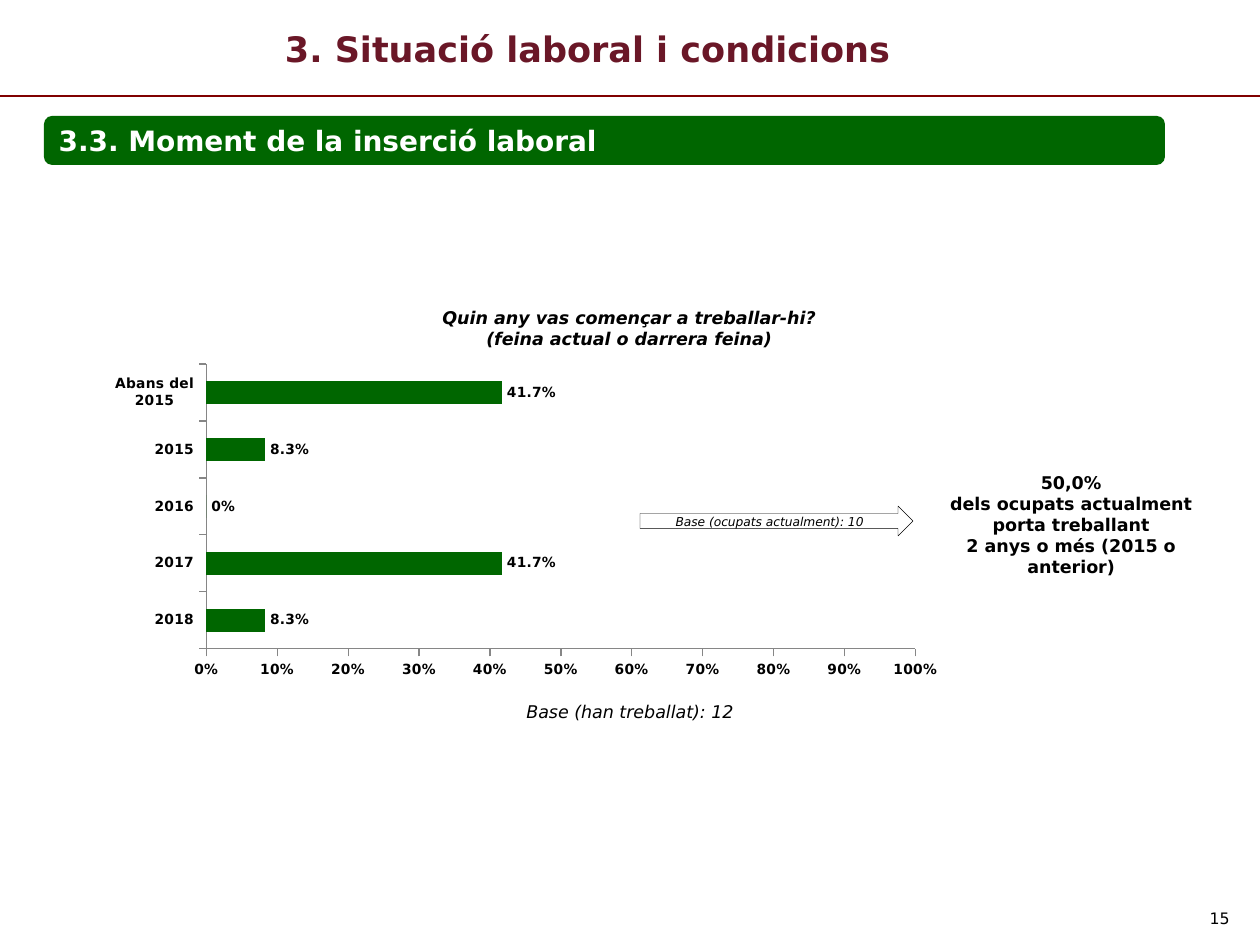
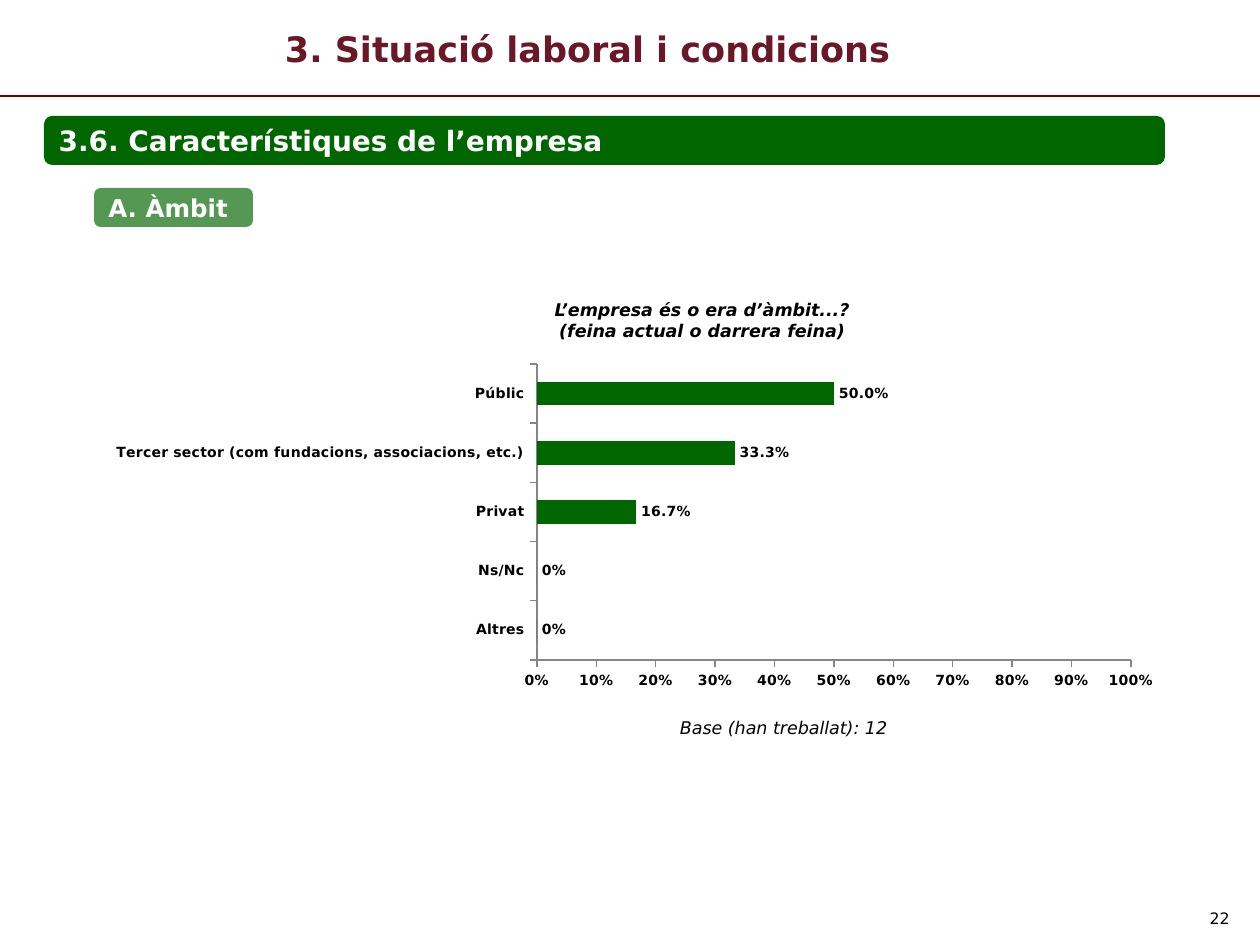
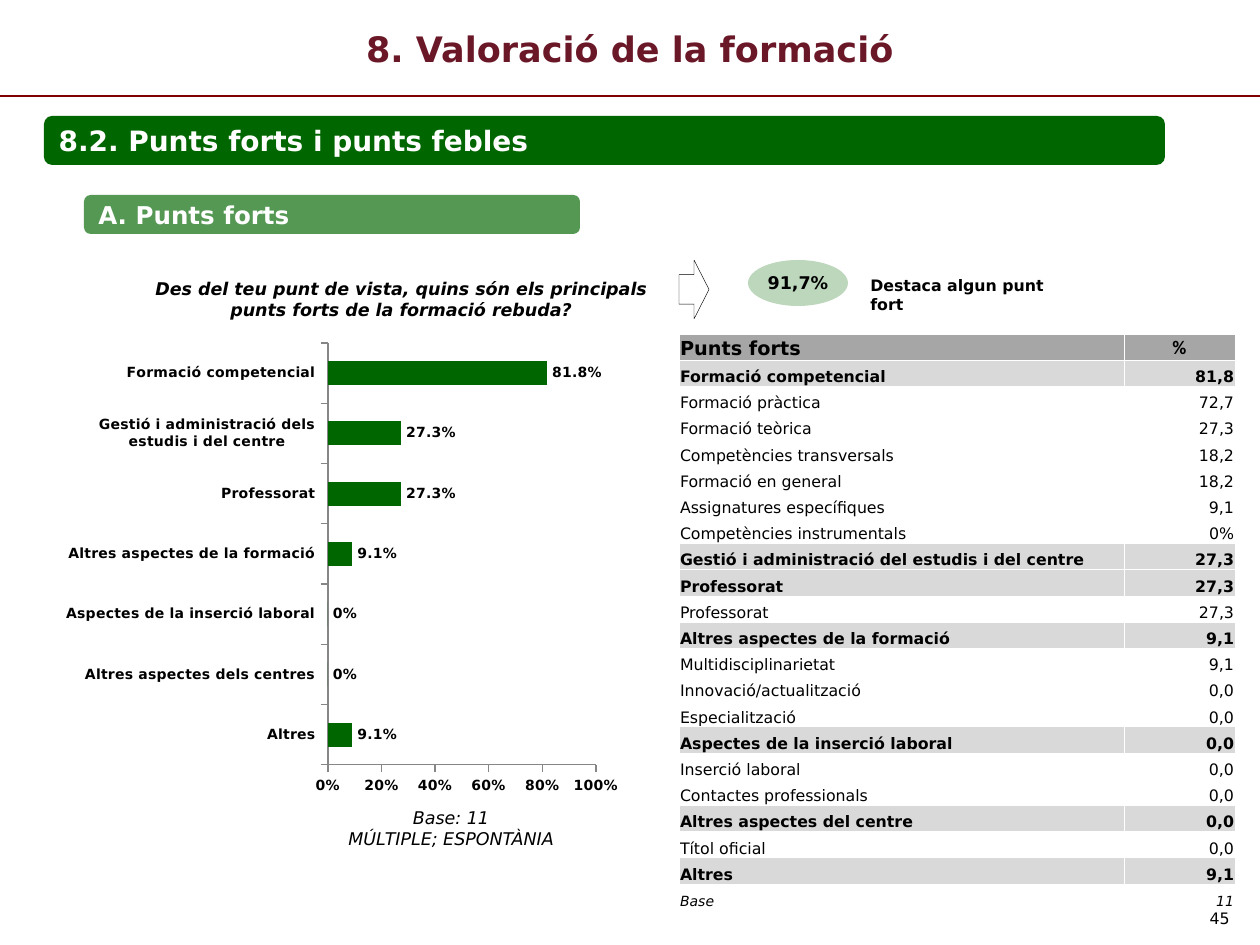
from collections import namedtuple

import pptx
import pptx.chart.data
import pptx.dml.color
import pptx.enum.chart
import pptx.enum.shapes
import pptx.enum.text
import pptx.oxml.ns
import pptx.util
from lxml import etree

RGBColor = pptx.dml.color.RGBColor
SHAPE = pptx.enum.shapes.MSO_SHAPE
ALIGN = pptx.enum.text.PP_ALIGN
ANCHOR = pptx.enum.text.MSO_ANCHOR

BLACK = RGBColor(0x00, 0x00, 0x00)
WHITE = RGBColor(0xFF, 0xFF, 0xFF)
GREEN = RGBColor(0x00, 0x66, 0x00)
MAROON = RGBColor(0x6A, 0x17, 0x27)
RULE_RED = RGBColor(0x80, 0x00, 0x00)
AXIS_GREY = RGBColor(0x86, 0x86, 0x86)
HEADER_GREY = RGBColor(0xA6, 0xA6, 0xA6)
GROUP_GREY = RGBColor(0xD9, 0xD9, 0xD9)

FONT = "DejaVu Sans"
PX_PER_INCH = 126
PAGE_WIDTH, PAGE_HEIGHT = 1260, 945
TITLE_HEIGHT = 96
TITLE_INDENT = 285
INSET = 13

Box = namedtuple("Box", "left top width height")

STRENGTHS = [
    ("Formació competencial", "81,8", [
        ("Formació pràctica", "72,7"),
        ("Formació teòrica", "27,3"),
        ("Competències transversals", "18,2"),
        ("Formació en general", "18,2"),
        ("Assignatures específiques", "9,1"),
        ("Competències instrumentals", "0%"),
    ]),
    ("Gestió i administració del estudis i del centre", "27,3", []),
    ("Professorat", "27,3", [("Professorat", "27,3")]),
    ("Altres aspectes de la formació", "9,1", [
        ("Multidisciplinarietat", "9,1"),
        ("Innovació/actualització", "0,0"),
        ("Especialització", "0,0"),
    ]),
    ("Aspectes de la inserció laboral", "0,0", [
        ("Inserció laboral", "0,0"),
        ("Contactes professionals", "0,0"),
    ]),
    ("Altres aspectes del centre", "0,0", [("Títol oficial", "0,0")]),
    ("Altres", "9,1", []),
]


def px(length):
    return pptx.util.Emu(round(length * 914400 / PX_PER_INCH))


def place(box):
    return [px(length) for length in box]


def style_font(font, size, color=BLACK, bold=False, italic=False, name=FONT):
    font.name, font.size, font.bold, font.italic = name, pptx.util.Pt(size), bold, italic
    font.color.rgb = color


def write(frame, lines, size, align=ALIGN.CENTER, anchor=ANCHOR.TOP, **style):
    frame.word_wrap = True
    frame.vertical_anchor = anchor
    for index, line in enumerate(lines):
        para = frame.add_paragraph() if index else frame.paragraphs[0]
        para.alignment = align
        span = para.add_run()
        span.text = line
        style_font(span.font, size, **style)


def add_text(page, box, lines, size, **style):
    frame = page.shapes.add_textbox(*place(box)).text_frame
    write(frame, lines, size, **style)
    return frame


def add_green_shape(page, kind, box, opacity=100):
    shape = page.shapes.add_shape(kind, *place(box))
    shape.shadow.inherit = False
    shape.fill.solid()
    shape.fill.fore_color.rgb = GREEN
    shape.line.fill.background()
    if opacity < 100:
        color = shape.fill._xPr.find(".//" + pptx.oxml.ns.qn("a:srgbClr"))
        etree.SubElement(color, pptx.oxml.ns.qn("a:alpha"), val=str(opacity * 1000))
    return shape


def add_heading(page, box, text, size, opacity=100):
    bar = add_green_shape(page, SHAPE.ROUNDED_RECTANGLE, box, opacity)
    write(bar.text_frame, [text], size, align=ALIGN.LEFT, anchor=ANCHOR.MIDDLE,
          color=WHITE, bold=True)


def add_arrow(page, box):
    arrow = page.shapes.add_shape(SHAPE.RIGHT_ARROW, *place(box))
    arrow.shadow.inherit = False
    arrow.fill.background()
    arrow.line.color.rgb = BLACK
    arrow.line.width = pptx.util.Pt(0.25)


def add_page(deck, title, section, number, centred=False):
    """Add a page with the title, rule, section bar and page number all pages share."""
    page = deck.slides.add_slide(deck.slide_layouts[6])
    rule = page.shapes.add_connector(pptx.enum.shapes.MSO_CONNECTOR.STRAIGHT,
                                     0, px(TITLE_HEIGHT), px(PAGE_WIDTH), px(TITLE_HEIGHT))
    rule.line.color.rgb = RULE_RED
    rule.line.width = pptx.util.Pt(1.5)
    etree.SubElement(rule._element.spPr, pptx.oxml.ns.qn("a:effectLst"))
    frame = add_text(page, Box(0, 0, PAGE_WIDTH, TITLE_HEIGHT), [title], 20,
                     align=ALIGN.CENTER if centred else ALIGN.LEFT,
                     anchor=ANCHOR.MIDDLE, color=MAROON, bold=True)
    if not centred:
        frame.margin_left = px(TITLE_INDENT)
    add_heading(page, Box(44, 116, 1121, 49), section, 16)
    add_text(page, Box(948, 903, 294, 26), [str(number)], 9, align=ALIGN.RIGHT)
    return page


def fix_plot_area(chart, box, plot):
    """Set the inner plot area, given in px from the corner of the chart box."""
    area = chart._chartSpace.chart.plotArea
    for old in area.findall(pptx.oxml.ns.qn("c:layout")):
        area.remove(old)
    layout = etree.Element(pptx.oxml.ns.qn("c:layout"))
    manual = etree.SubElement(layout, pptx.oxml.ns.qn("c:manualLayout"))
    settings = [
        ("layoutTarget", "inner"), ("xMode", "edge"), ("yMode", "edge"),
        ("x", plot.left / box.width), ("y", plot.top / box.height),
        ("w", plot.width / box.width), ("h", plot.height / box.height),
    ]
    for tag, value in settings:
        etree.SubElement(manual, pptx.oxml.ns.qn("c:" + tag), val=str(value))
    area.insert(0, layout)


def add_bar_chart(page, box, plot, shares, step):
    """Draw shares, listed from the bottom bar up, on a scale from 0 to 100%."""
    data = pptx.chart.data.CategoryChartData()
    data.categories = list(shares)
    data.add_series("Series 1", list(shares.values()))
    chart = page.shapes.add_chart(pptx.enum.chart.XL_CHART_TYPE.BAR_CLUSTERED,
                                  *place(box), data).chart
    chart.has_legend = False
    chart.has_title = False
    style_font(chart.font, 8, bold=True)

    scale = chart.value_axis
    scale.minimum_scale, scale.maximum_scale, scale.major_unit = 0, 1, step
    scale.has_major_gridlines = False
    scale.tick_labels.number_format = "0%"
    scale.tick_labels.number_format_is_linked = False
    for axis in (scale, chart.category_axis):
        axis.major_tick_mark = pptx.enum.chart.XL_TICK_MARK.OUTSIDE
        axis.format.line.color.rgb = AXIS_GREY
        style_font(axis.tick_labels.font, 8, bold=True)

    bars = chart.plots[0]
    bars.gap_width = 150
    bars.vary_by_categories = False
    bars.series[0].format.fill.solid()
    bars.series[0].format.fill.fore_color.rgb = GREEN
    bars.has_data_labels = True
    labels = bars.data_labels
    labels.show_value = True
    labels.number_format = "0.0%;-0.0%;0%"
    labels.number_format_is_linked = False
    labels.position = pptx.enum.chart.XL_LABEL_POSITION.OUTSIDE_END
    style_font(labels.font, 8, bold=True)
    fix_plot_area(chart, box, plot)


def add_question(page, box, lines):
    add_text(page, box, lines, 10, bold=True, italic=True)


def add_base(page, box, lines):
    add_text(page, box, lines, 10, italic=True)


def fill_cell(cell, text, fill, size, align, **style):
    cell.margin_left = cell.margin_right = cell.margin_top = px(1)
    cell.margin_bottom = 0
    properties = cell._tc.get_or_add_tcPr()
    for side in ("lnL", "lnR", "lnT", "lnB"):
        border = etree.SubElement(properties, pptx.oxml.ns.qn("a:" + side), w="6350")
        solid = etree.SubElement(border, pptx.oxml.ns.qn("a:solidFill"))
        etree.SubElement(solid, pptx.oxml.ns.qn("a:srgbClr"), val=str(WHITE))
    cell.fill.solid()
    cell.fill.fore_color.rgb = fill
    write(cell.text_frame, [text], size, align=align, **style)
    cell.vertical_anchor = ANCHOR.BOTTOM


def add_strengths_table(page, box, value_width):
    rows = []
    for group, total, items in STRENGTHS:
        rows.append((group, total, GROUP_GREY, 9, {"bold": True}))
        rows += [(label, value, WHITE, 9, {}) for label, value in items]
    rows.append(("Base", "11", WHITE, 8, {"italic": True}))

    table = page.shapes.add_table(len(rows) + 1, 2, *place(box)).table
    table.first_row = table.horz_banding = False
    table.columns[0].width = px(box.width - value_width)
    table.columns[1].width = px(value_width)
    for row in table.rows:
        row.height = px(box.height / (len(rows) + 1))
    fill_cell(table.cell(0, 0), "Punts forts", HEADER_GREY, 11, ALIGN.LEFT, bold=True)
    fill_cell(table.cell(0, 1), "%", HEADER_GREY, 11, ALIGN.CENTER, bold=True, name="Calibri")
    for index, (label, value, fill, size, style) in enumerate(rows, 1):
        fill_cell(table.cell(index, 0), label, fill, size, ALIGN.LEFT, **style)
        fill_cell(table.cell(index, 1), value, fill, size, ALIGN.RIGHT, **style)


def add_base_arrow(page, box, text):
    add_arrow(page, box)
    add_text(page, Box(box.left - 18, box.top + 2, box.width + 22, 28), [text], 7, italic=True)


def add_highlight(page, box, share, text):
    """Place an arrow, a share in an ellipse and its caption from left to right."""
    add_arrow(page, Box(box.left, box.top, 30, box.height))
    ellipse = add_green_shape(page, SHAPE.OVAL, Box(box.left + 69, box.top, 100, 46), 26)
    frame = ellipse.text_frame
    frame.margin_left = frame.margin_right = frame.margin_top = frame.margin_bottom = 0
    write(frame, [share], 10, anchor=ANCHOR.MIDDLE, bold=True)
    caption_left = 179
    add_text(page, Box(box.left + caption_left, box.top + 10, box.width - caption_left, 50),
             [text], 9, align=ALIGN.LEFT, bold=True)


def build_start_page(deck):
    page = add_page(deck, "3. Situació laboral i condicions",
                    "3.3. Moment de la inserció laboral", 15)
    add_question(page, Box(425, 301, 408, 55),
                 ["Quin any vas començar a treballar-hi?", "(feina actual o darrera feina)"])
    add_base(page, Box(511, 695, 238, 55), ["Base (han treballat): 12"])
    shares = {"2018": 0.083, "2017": 0.417, "2016": 0, "2015": 0.083, "Abans del 2015": 0.417}
    add_bar_chart(page, Box(115, 357, 840, 328), Box(81, 7, 719, 285), shares, 0.1)
    add_text(page, Box(937, 466, 268, 118),
             ["50,0%", "dels ocupats actualment porta treballant",
              "2 anys o més (2015 o anterior)"], 10, bold=True)
    add_base_arrow(page, Box(640, 506, 273, 30), "Base (ocupats actualment): 10")


def build_company_page(deck):
    page = add_page(deck, "3. Situació laboral i condicions",
                    "3.6. Característiques de l’empresa", 22)
    add_heading(page, Box(94, 188, 159, 39), "A. Àmbit", 14, 67)
    add_question(page, Box(537, 293, 330, 55),
                 ["L’empresa és o era d’àmbit...?", "(feina actual o darrera feina)"])
    add_base(page, Box(580, 711, 407, 34), ["Base (han treballat): 12"])
    shares = {
        "Altres": 0,
        "Ns/Nc": 0,
        "Privat": 0.167,
        "Tercer sector (com fundacions, associacions, etc.)": 0.333,
        "Públic": 0.5,
    }
    add_bar_chart(page, Box(44, 345, 1121, 350), Box(493, 19, 594, 296), shares, 0.1)


def build_strengths_page(deck):
    page = add_page(deck, "8. Valoració de la formació",
                    "8.2. Punts forts i punts febles", 45, centred=True)
    add_heading(page, Box(84, 195, 496, 39), "A. Punts forts", 14, 67)
    add_question(page, Box(123, 272, 556, 55),
                 ["Des del teu punt de vista, quins són els principals "
                  "punts forts de la formació rebuda?"])
    add_base(page, Box(322, 801, 258, 55), ["Base: 11", "MÚLTIPLE; ESPONTÀNIA"])
    shares = {
        "Altres": 0.091,
        "Altres aspectes dels centres": 0,
        "Aspectes de la inserció laboral": 0,
        "Altres aspectes de la formació": 0.091,
        "Professorat": 0.273,
        "Gestió i administració dels estudis i del centre": 0.273,
        "Formació competencial": 0.818,
    }
    add_bar_chart(page, Box(54, 334, 576, 470), Box(274, 9, 268, 422), shares, 0.2)
    add_highlight(page, Box(679, 260, 404, 59), "91,7%", "Destaca algun punt fort")
    add_strengths_table(page, Box(679, 334, 556, 577), 111)


def main():
    deck = pptx.Presentation()
    deck.slide_width, deck.slide_height = px(PAGE_WIDTH), px(PAGE_HEIGHT)
    build_start_page(deck)
    build_company_page(deck)
    build_strengths_page(deck)
    deck.save("out.pptx")


if __name__ == "__main__":
    main()
